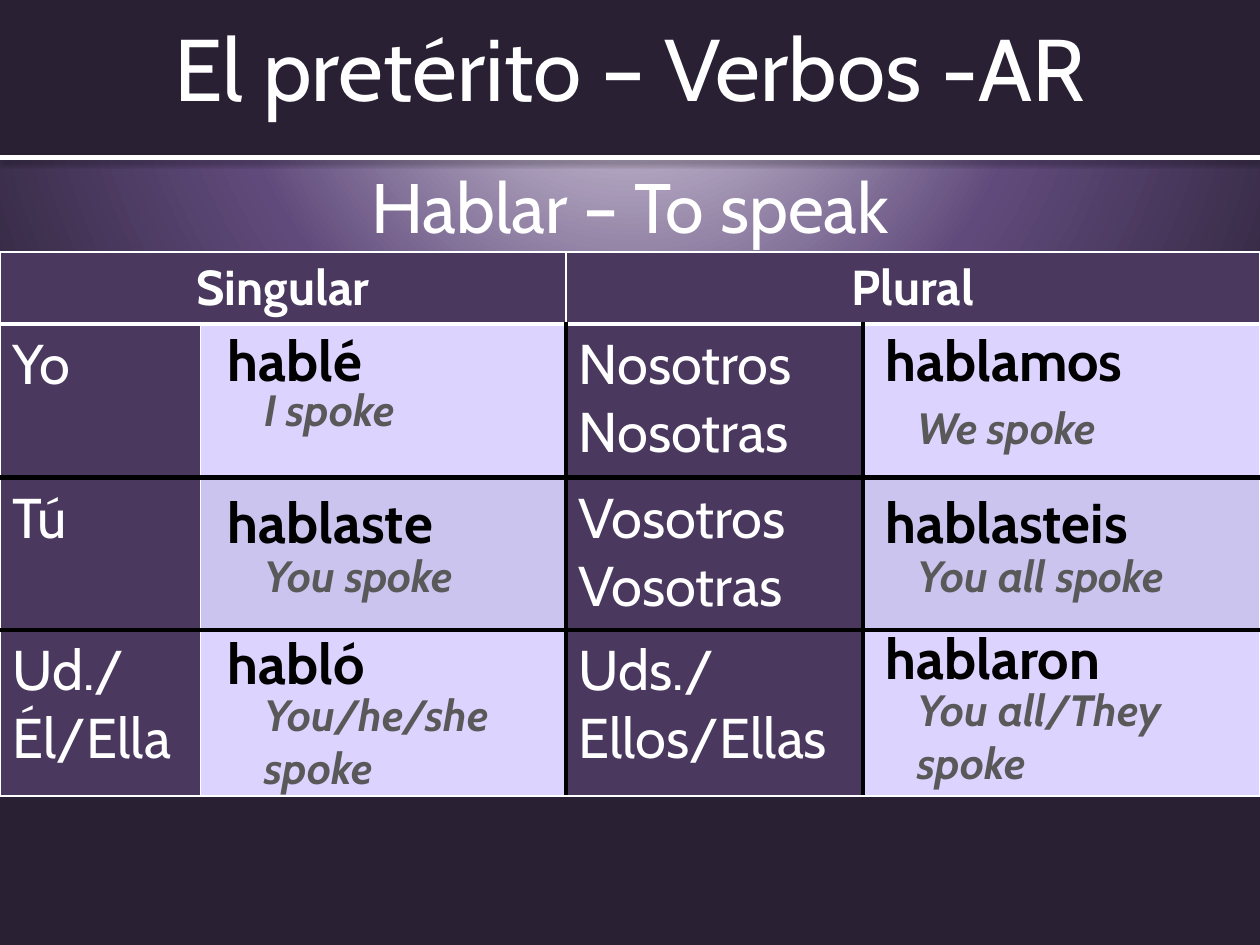
from lxml import etree
from pptx import Presentation
from pptx.dml.color import RGBColor
from pptx.enum.shapes import MSO_CONNECTOR, MSO_SHAPE
from pptx.enum.text import MSO_ANCHOR, PP_ALIGN
from pptx.oxml import parse_xml
from pptx.oxml.ns import nsdecls, qn
from pptx.util import Cm, Pt

RECT = MSO_SHAPE.RECTANGLE
LINE = MSO_CONNECTOR.STRAIGHT
LEFT, MID = PP_ALIGN.LEFT, PP_ALIGN.CENTER
TOP, CENTER = MSO_ANCHOR.TOP, MSO_ANCHOR.MIDDLE

FONT = "Cabin"
WHITE = RGBColor(0xFF, 0xFF, 0xFF)
BLACK = RGBColor(0, 0, 0)
GRAY = RGBColor(0x59, 0x59, 0x59)
NIGHT = RGBColor(0x29, 0x20, 0x34)
PLUM = RGBColor(0x4A, 0x38, 0x5F)
LILAC = RGBColor(0xDC, 0xD3, 0xFF)
MAUVE = RGBColor(0xCB, 0xC4, 0xEE)
GRAPE = RGBColor(0x60, 0x4A, 0x7B)
PALE = RGBColor(0xE6, 0xE0, 0xEC)

PLAIN = "{2D5ABB26-0587-4C30-8999-92F81FD0307C}"
WIDTHS = (4.04, 7.37, 5.99, 8)
HEIGHTS = (1.45, 3.1, 3.07, 3.35)
THIN, THICK = (WHITE, 1), (BLACK, 3)
RULE = (WHITE, 3)

# Pronouns of each row: singular, plural
NOUNS = (
    (["Yo"], ["Nosotros", "Nosotras"]),
    (["Tú"], ["Vosotros", "Vosotras"]),
    (["Ud./Él/Ella"], ["Uds./Ellos/Ellas"]),
)
# Verb forms and meanings: text, left, top, width
FORMS = (
    ("hablé", 4.34, 6.48, 6.25),
    ("hablaste", 4.34, 9.73, 5.94),
    ("habló", 4.34, 12.57, 6.25),
    ("hablamos", 17.6, 6.48, 7.16),
    ("hablasteis", 17.6, 9.73, 6.4),
    ("hablaron", 17.6, 12.47, 6.1),
)
SENSES = (
    ("I spoke", 5.08, 7.62, 6.25),
    ("You spoke", 5.08, 10.97, 6.25),
    ("You/he/she spoke", 5.08, 13.77, 6.25),
    ("We spoke", 18.24, 7.98, 6.25),
    ("You all spoke", 18.24, 10.97, 6.25),
    ("You all/They spoke", 18.24, 13.67, 6.25),
)


def write(frame, lines, size, color, align=LEFT, bold=False, italic=False):
    for i, line in enumerate(lines):
        para = frame.add_paragraph() if i else frame.paragraphs[0]
        para.alignment = align
        run = para.add_run()
        run.text = line
        font = run.font
        font.name, font.size = FONT, Pt(size)
        font.bold, font.italic = bold, italic
        font.color.rgb = color


def add_text(slide, text, top, height, size, anchor):
    box = slide.shapes.add_textbox(0, Cm(top), Cm(25.4), Cm(height))
    frame = box.text_frame
    frame.word_wrap = True
    frame.vertical_anchor = anchor
    write(frame, [text], size, WHITE, MID)
    return frame


def add_grid(slide, left, top, widths, heights):
    shape = slide.shapes.add_table(
        len(heights), len(widths), Cm(left), Cm(top),
        Cm(sum(widths)), Cm(sum(heights)))
    grid = shape.table
    grid.first_row = grid.horz_banding = False
    shape._element.find(".//" + qn("a:tableStyleId")).text = PLAIN
    for col, width in zip(grid.columns, widths):
        col.width = Cm(width)
    for row, height in zip(grid.rows, heights):
        row.height = Cm(height)
    return grid


def add_note(slide, item, size, color, italic=False):
    text, left, top, width = item
    cell = add_grid(slide, left, top, [width], [1.04]).cell(0, 0)
    write(cell.text_frame, [text], size, color, bold=True, italic=italic)


def style(cell, fill, sides):
    """Borders come as left, right, top, bottom; they must precede the fill."""
    props = cell._tc.get_or_add_tcPr()
    for side, (color, width) in zip("LRTB", sides):
        line = etree.SubElement(props, qn("a:ln" + side), w=str(Pt(width)))
        solid = etree.SubElement(line, qn("a:solidFill"))
        etree.SubElement(solid, qn("a:srgbClr"), val=str(color))
    cell.fill.solid()
    cell.fill.fore_color.rgb = fill


def add_chart(slide):
    grid = add_grid(slide, 0, 5.08, WIDTHS, HEIGHTS)
    # Header
    for col in range(4):
        style(grid.cell(0, col), PLUM, (THIN, THIN, THIN, RULE))
    for col, name in ((0, "Singular"), (2, "Plural")):
        head = grid.cell(0, col)
        head.merge(grid.cell(0, col + 1))
        write(head.text_frame, [name], 28, WHITE, MID, bold=True)
    # Body
    walls = (THIN, THIN, THICK, THICK, THIN)
    floors = (RULE, THICK, THICK, THIN)
    for row, nouns in enumerate(NOUNS, 1):
        shade = MAUVE if row == 2 else LILAC
        for col in range(4):
            sides = (*walls[col:col + 2], *floors[row - 1:row + 1])
            style(grid.cell(row, col), shade if col % 2 else PLUM, sides)
        for col, lines in zip((0, 2), nouns):
            write(grid.cell(row, col).text_frame, lines, 32, WHITE)


def paint(slide):
    stops = "".join(
        f'<a:gs pos="{pos}000"><a:srgbClr val="{color}"/></a:gs>'
        for pos, color in ((0, PALE), (52, GRAPE), (100, NIGHT)))
    back = parse_xml(
        f'<p:bg {nsdecls("p", "a")}><p:bgPr><a:gradFill><a:gsLst>{stops}'
        '</a:gsLst><a:path path="circle"><a:fillToRect l="50000" t="-80000" '
        'r="50000" b="180000"/></a:path></a:gradFill><a:effectLst/>'
        '</p:bgPr></p:bg>')
    slide._element.cSld.insert(0, back)


def add_band(slide):
    band = slide.shapes.add_shape(RECT, 0, 0, Cm(25.4), Cm(3.18))
    band.shadow.inherit = False
    band.fill.solid()
    band.fill.fore_color.rgb = NIGHT
    band.line.fill.background()


def add_rule(slide):
    rule = slide.shapes.add_connector(LINE, 0, Cm(3.18), Cm(25.4), Cm(3.18))
    rule.line.color.rgb = WHITE
    rule.line.width = Pt(3)
    rule._element.spPr.append(parse_xml(
        f'<a:effectLst {nsdecls("a")}><a:outerShdw blurRad="40000" '
        'dist="20000" dir="5400000" rotWithShape="0"><a:srgbClr val="000000">'
        '<a:alpha val="38000"/></a:srgbClr></a:outerShdw></a:effectLst>'))


def main():
    deck = Presentation()
    deck.slide_width, deck.slide_height = Cm(25.4), Cm(19.05)
    slide = deck.slides.add_slide(deck.slide_layouts[6])

    # Backdrop and titles
    paint(slide)
    add_band(slide)
    verb = add_text(slide, "Hablar – To speak", 3.18, 13.2, 40, TOP)
    verb.paragraphs[0].space_before = Pt(8)
    add_rule(slide)
    add_text(slide, "El pretérito – Verbos -AR", 0, 2.7, 50, CENTER)

    # Verb table, then its forms and meanings
    add_chart(slide)
    for item in FORMS:
        add_note(slide, item, 32, BLACK)
    for item in SENSES:
        add_note(slide, item, 25, GRAY, italic=True)

    deck.save("out.pptx")


if __name__ == "__main__":
    main()
